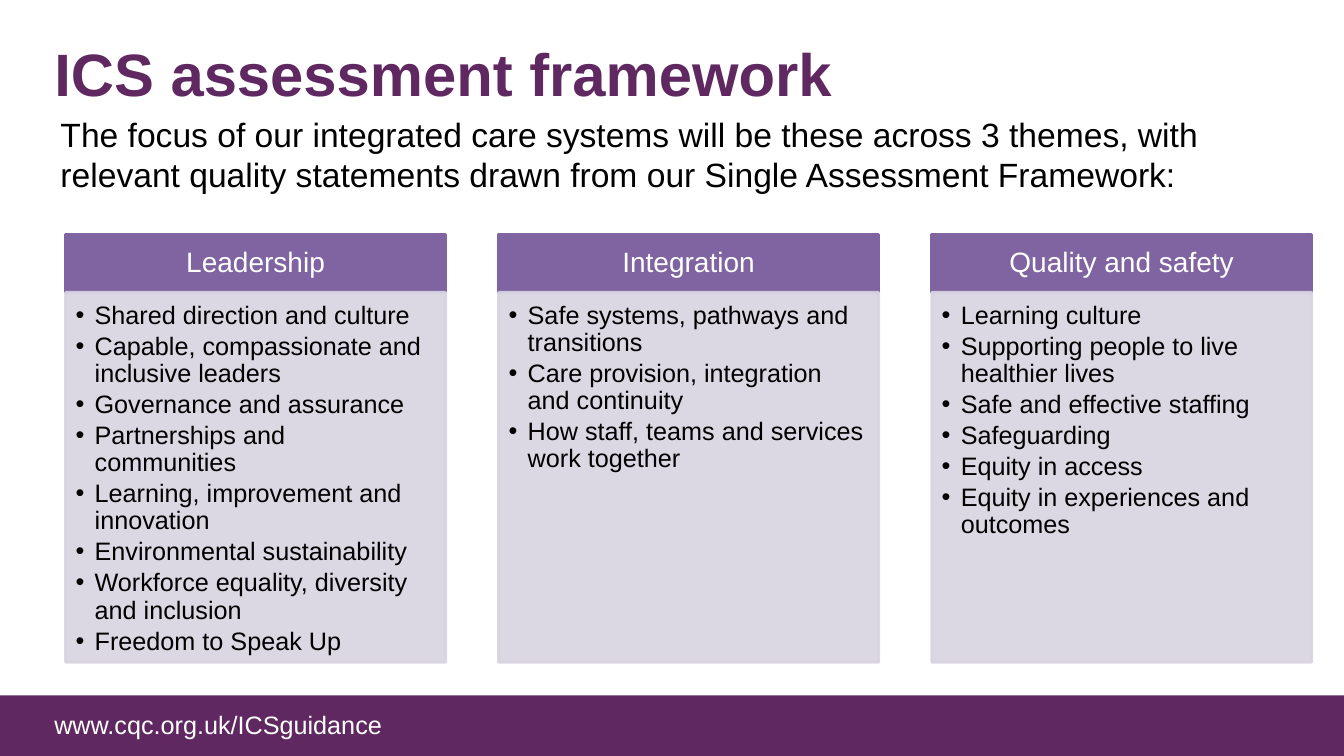
"""Build the ICS assessment framework slide."""
from lxml import etree
from pptx import Presentation
from pptx import util as u
from pptx.dml.color import RGBColor
from pptx.enum import shapes, text
from pptx.oxml.ns import qn

THEME = {
    "font": "Arial", "plum": "5F2861", "violet": "8064A2", "lilac": "D8D3E0",
    "black": "000000", "white": "FFFFFF",
    "title": 42.7, "intro": 24, "heading": 20, "text": 18,
}
THEMES = {
    "Leadership": [
        "Shared direction and culture",
        "Capable, compassionate and inclusive leaders",
        "Governance and assurance",
        "Partnerships and communities",
        "Learning, improvement and innovation",
        "Environmental sustainability",
        "Workforce equality, diversity and inclusion",
        "Freedom to Speak Up",
    ],
    "Integration": [
        "Safe systems, pathways and transitions",
        "Care provision, integration and continuity",
        "How staff, teams and services work together",
    ],
    "Quality and safety": [
        "Learning culture",
        "Supporting people to live healthier lives",
        "Safe and effective staffing",
        "Safeguarding",
        "Equity in access",
        "Equity in experiences and outcomes",
    ],
}

deck = Presentation()
deck.slide_width, deck.slide_height = u.Inches(13.33), u.Inches(7.5)
COLUMN, ROW = deck.slide_width / 100, deck.slide_height / 100
slide = deck.slides.add_slide(deck.slide_layouts[1])


def write(shape, lines, size, color="black", bold=False, align="LEFT", anchor="TOP",
          insets=(0.1, 0.05, 0.1, 0.05), spacing=1, after=0, hang=0):
    """Fill a shape with one formatted paragraph per line."""
    frame = shape.text_frame
    frame.word_wrap = True
    frame.auto_size = text.MSO_AUTO_SIZE.NONE
    frame.vertical_anchor = text.MSO_ANCHOR[anchor]
    (frame.margin_left, frame.margin_top,
     frame.margin_right, frame.margin_bottom) = map(u.Inches, insets)
    frame.text = "\n".join(lines)
    for paragraph in frame.paragraphs:
        props = paragraph._p.get_or_add_pPr()
        props.set("marL", str(u.Inches(hang)))
        props.set("indent", str(-u.Inches(hang)))
        if hang:
            etree.SubElement(props, qn("a:buFont"), typeface=THEME["font"])
            etree.SubElement(props, qn("a:buChar"), char="•")
        else:
            etree.SubElement(props, qn("a:buNone"))
        paragraph.alignment = text.PP_ALIGN[align]
        paragraph.line_spacing = spacing
        paragraph.space_before, paragraph.space_after = u.Pt(0), u.Pt(after)
        font = paragraph.runs[0].font
        font.name, font.size, font.bold = THEME["font"], u.Pt(THEME[size]), bold
        font.color.rgb = RGBColor.from_string(THEME[color])


def panel(left, top, width, height, color, opacity=100, outline=2):
    """Add a flat rectangle placed by columns and rows."""
    shape = slide.shapes.add_shape(
        shapes.MSO_SHAPE.RECTANGLE, round(left * COLUMN), round(top * ROW),
        round(width * COLUMN), round(height * ROW))
    shape.shadow.inherit = False
    shape.line.width = u.Pt(outline)
    for fill in (shape.fill, shape.line.fill):
        fill.solid()
        fill.fore_color.rgb = RGBColor.from_string(THEME[color])
    if not outline:
        shape.line.fill.background()
    if opacity < 100:
        for tint in shape._element.spPr.iter(qn("a:srgbClr")):
            etree.SubElement(tint, qn("a:alpha"), val=str(opacity * 1000))
    return shape


panel(0, 92, 100, 8, "plum", outline=0)

title, intro = slide.placeholders
link = slide.shapes.add_textbox(0, 0, 0, 0)
for item, (left, top, width, height) in (
    (title, (3.3, 4.13, 90, 19.33)),
    (intro, (3.75, 13.73, 93.85, 16.27)),
    (link, (3.3, 93.2, 50, 5.33)),
):
    item.left, item.width = round(left * COLUMN), round(width * COLUMN)
    item.top, item.height = round(top * ROW), round(height * ROW)

write(title, ["ICS assessment framework"], "title", "plum", bold=True)
write(intro, ["The focus of our integrated care systems will be these across 3 themes, "
              "with relevant quality statements drawn from our Single Assessment Framework:"],
      "intro", insets=(0.1, 0.1, 0.1, 0.1))

for index, (heading, statements) in enumerate(THEMES.items()):
    left = 4.88 + index * 32.22
    write(panel(left, 31.07, 28.28, 7.6, "violet"), [heading], "heading", "white",
          align="CENTER", anchor="MIDDLE", insets=(0.16, 0.09, 0.16, 0.09), spacing=0.9)
    write(panel(left, 38.67, 28.28, 48.93, "lilac", opacity=90), statements, "text",
          insets=(0.1, 0.1, 0.14, 0.16), spacing=0.9, after=2.7, hang=0.19)

write(link, ["www.cqc.org.uk/ICSguidance"], "text", "white")

deck.save("out.pptx")
